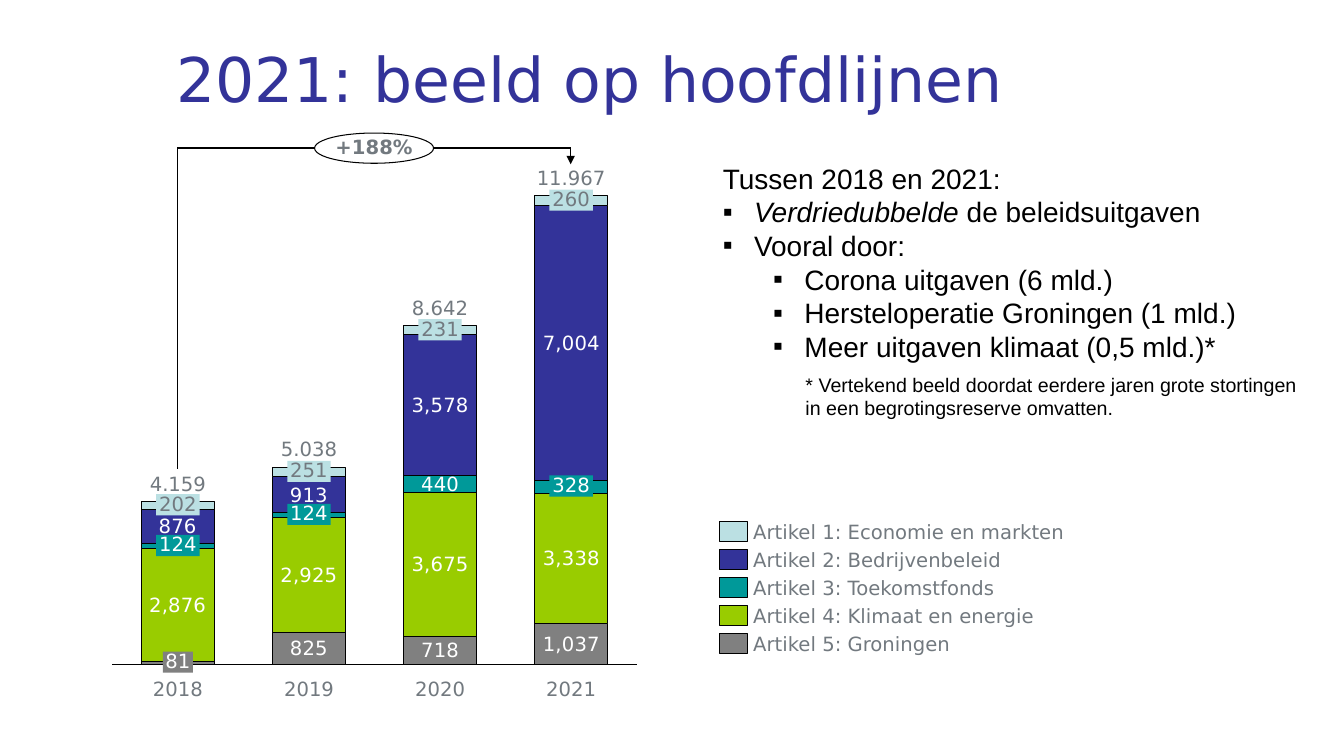
from lxml import etree
from pptx import Presentation
from pptx.chart.data import CategoryChartData
from pptx.dml.color import RGBColor
from pptx.enum.chart import XL_CHART_TYPE, XL_TICK_LABEL_POSITION, XL_TICK_MARK
from pptx.enum.shapes import MSO_CONNECTOR, MSO_SHAPE
from pptx.enum.text import MSO_ANCHOR, PP_ALIGN
from pptx.oxml import parse_xml
from pptx.oxml.ns import nsdecls, qn
from pptx.util import Inches, Pt

STACK = XL_CHART_TYPE.COLUMN_STACKED
NO_TEXT, NO_TICK = XL_TICK_LABEL_POSITION.NONE, XL_TICK_MARK.NONE
LINE = MSO_CONNECTOR.STRAIGHT
RECT, OVAL = MSO_SHAPE.RECTANGLE, MSO_SHAPE.OVAL
TOP, MID, BASE = MSO_ANCHOR.TOP, MSO_ANCHOR.MIDDLE, MSO_ANCHOR.BOTTOM
LEFT, MIDST = PP_ALIGN.LEFT, PP_ALIGN.CENTER
SANS, ARIAL = "DejaVu Sans", "Arial"
HUES = {
    "gray": "808080", "lime": "99CC00", "teal": "009999", "navy": "333399",
    "pale": "BBE0E3", "text": "72797F", "black": "000000", "white": "FFFFFF",
}
INK = {name: RGBColor.from_string(code) for name, code in HUES.items()}

deck = Presentation()
deck.slide_width, deck.slide_height = Inches(13.33), Inches(7.5)
slide = deck.slides.add_slide(deck.slide_layouts[6])
shapes = slide.shapes


def write(para, text, size, font, hue, bold=None, slant=None):
    run = para.add_run()
    run.text = text
    run.font.size, run.font.name = Pt(size), font
    run.font.color.rgb = INK[hue]
    run.font.bold, run.font.italic = bold, slant


def label(box, text, hue="text", side=0, fill=None, edge=None,
          anchor=MID, align=MIDST, form=RECT, bold=None):
    spot = [Inches(n) for n in box]
    if fill:
        item = shapes.add_shape(form, *spot)
        item.shadow.inherit = False
        item.fill.solid()
        item.fill.fore_color.rgb = INK[fill]
        if edge:
            item.line.color.rgb = INK[edge]
            item.line.width = Pt(0.75)
        else:
            item.line.fill.background()
    else:
        item = shapes.add_textbox(*spot)
    if text:
        frame = item.text_frame
        frame.word_wrap = False
        frame.vertical_anchor = anchor
        frame.margin_left = frame.margin_right = Inches(side)
        frame.margin_top = frame.margin_bottom = 0
        para = frame.paragraphs[0]
        para.alignment, para.line_spacing = align, 0.9
        write(para, text, 14, SANS, hue, bold)


title = shapes.add_textbox(Inches(1.65), Inches(0.15), Inches(11.16), Inches(1.25))
title.text_frame.word_wrap = True
title.text_frame.vertical_anchor = MID
write(title.text_frame.paragraphs[0], "2021: beeld op hoofdlijnen", 44, SANS, "navy")

years = ["2018", "2019", "2020", "2021"]
parts = [
    ("Artikel 5: Groningen", "gray", [81, 825, 718, 1037], {0}),
    ("Artikel 4: Klimaat en energie", "lime", [2876, 2925, 3675, 3338], set()),
    ("Artikel 3: Toekomstfonds", "teal", [124, 124, 440, 328], {0, 1, 3}),
    ("Artikel 2: Bedrijvenbeleid", "navy", [876, 913, 3578, 7004], set()),
    ("Artikel 1: Economie en markten", "pale", [202, 251, 231, 260], {0, 1, 2, 3}),
]
peak = 11967

data = CategoryChartData(number_format="#,##0")
data.categories = years
for name, hue, vals, tags in parts:
    data.add_series(name, vals)
chart = shapes.add_chart(STACK, Inches(1.02), Inches(1.85), Inches(5.39), Inches(4.83), data).chart
chart.has_legend = chart.has_title = False
chart.font.name, chart.font.size = SANS, Pt(10)
chart.font.color.rgb = INK["black"]
axis = chart.category_axis
axis.tick_label_position = NO_TEXT
axis.major_tick_mark = axis.minor_tick_mark = NO_TICK
axis.format.line.color.rgb = INK["black"]
axis.format.line.width = Pt(0.75)
scale = chart.value_axis
scale.visible = scale.has_major_gridlines = False
scale.minimum_scale, scale.maximum_scale = 0, peak
plot = chart.plots[0]
plot.gap_width, plot.overlap, plot.vary_by_categories = 80, 100, False

for bars, (name, hue, vals, tags) in zip(plot.series, parts):
    bars.format.fill.solid()
    bars.format.fill.fore_color.rgb = INK[hue]
    bars.format.line.color.rgb = INK["black"]
    bars.format.line.width = Pt(0.75)
    bars.data_labels.show_value = False
    for col in set(range(len(years))) - tags:
        font = bars.points[col].data_label.font
        font.name, font.size = SANS, Pt(14)
        font.color.rgb = INK["white"]

area = chart.element.find(".//" + qn("c:plotArea"))
for old in area.findall(qn("c:layout")):
    area.remove(old)
area.insert(0, parse_xml(
    f'<c:layout {nsdecls("c")}><c:manualLayout><c:layoutTarget val="inner"/>'
    '<c:xMode val="edge"/><c:yMode val="edge"/><c:x val="0.017"/><c:y val="0.019"/>'
    '<c:w val="0.966"/><c:h val="0.963"/></c:manualLayout></c:layout>'))

route = [(1.76, 4.65), (1.76, 1.47), (5.66, 1.47), (5.66, 1.63)]
for start, end in zip(route, route[1:]):
    line = shapes.add_connector(LINE, *[Inches(n) for n in start + end])
    line.line.color.rgb = INK["black"]
    line.line.width = Pt(1)
    props = line.element.spPr
    if end == route[-1]:
        etree.SubElement(props.find(qn("a:ln")), qn("a:tailEnd"), type="triangle")
    etree.SubElement(props, qn("a:effectLst"))

floor, unit = 6.58, 4.65 / peak
for col, year in enumerate(years):
    mid = 1.765 + 1.3 * col
    total = 0
    for name, hue, vals, tags in parts:
        if col in tags:
            wide = 0.43 if vals[col] > 99 else 0.3
            high = floor - (total + vals[col] / 2) * unit - 0.1
            tone = "text" if hue == "pale" else "white"
            label((mid - wide / 2, high, wide, 0.21), str(vals[col]), tone, 0.03, hue)
        total += vals[col]
    label((mid - 0.5, floor - total * unit - 0.26, 1, 0.21),
          f"{total:,}".replace(",", "."), side=0.03, anchor=BASE)
    label((mid - 0.255, 6.74, 0.51, 0.21), year, anchor=TOP)

label((3.12, 1.32, 1.18, 0.3), "+188%", fill="white", edge="black", form=OVAL, bold=True)

for row, (name, hue, vals, tags) in enumerate(reversed(parts)):
    high = 5.17 + 0.278 * row
    label((7.14, high, 0.27, 0.2), "", fill=hue, edge="black")
    label((7.47, high + 0.015, 3.11, 0.21), name, align=LEFT)

points = [
    (None, [("Tussen 2018 en 2021:", None)]),
    (0, [("Verdriedubbelde", True), (" de beleidsuitgaven", None)]),
    (0, [("Vooral door:", None)]),
    (1, [("Corona uitgaven (6 mld.)", None)]),
    (1, [("Hersteloperatie Groningen (1 mld.)", None)]),
    (1, [("Meer uitgaven klimaat (0,5 mld.)*", None)]),
]
body = shapes.add_textbox(Inches(7.07), Inches(1.55), Inches(5.98), Inches(2.12)).text_frame
body.word_wrap = True
for row, (level, runs) in enumerate(points):
    para = body.add_paragraph() if row else body.paragraphs[0]
    if level is not None:
        para.level = level
        props = para._p.get_or_add_pPr()
        props.set("marL", str(Inches(0.31 + 0.5 * level)))
        props.set("indent", str(Inches(-0.31)))
        etree.SubElement(props, qn("a:buFont"), typeface=ARIAL)
        etree.SubElement(props, qn("a:buChar"), char="▪")
    for text, slant in runs:
        write(para, text, 20, ARIAL, "black", slant=slant)

note = shapes.add_textbox(Inches(7.89), Inches(3.65), Inches(5.12), Inches(0.57)).text_frame
note.word_wrap = True
write(note.paragraphs[0], "* Vertekend beeld doordat eerdere jaren grote stortingen "
      "in een begrotingsreserve omvatten.", 14, ARIAL, "black")

deck.save("out.pptx")
